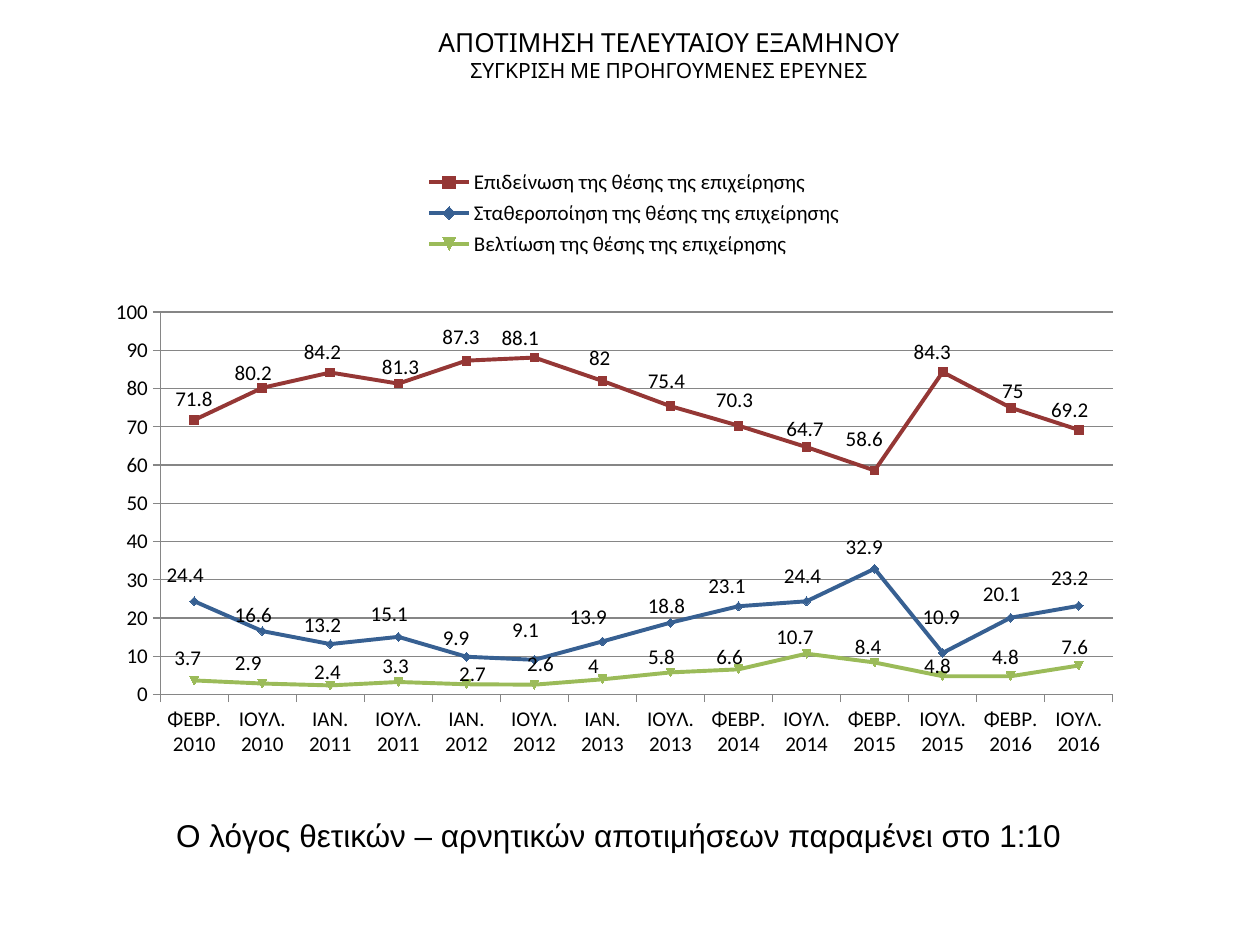
from lxml import etree
from pptx import Presentation
from pptx.chart.data import CategoryChartData
from pptx.dml.color import RGBColor
from pptx.enum.chart import XL_CHART_TYPE, XL_LABEL_POSITION, XL_LEGEND_POSITION, XL_TICK_MARK
from pptx.enum.text import MSO_ANCHOR, PP_ALIGN
from pptx.oxml import parse_xml
from pptx.oxml.ns import nsdecls
from pptx.util import Inches, Pt

COLORS = {"text": "000000", "axis": "868686",
          "worse": "953735", "stable": "376092", "better": "9BBB59"}
LEFT, TOP, WIDTH, HEIGHT = 0.7, 1.25, 8.67, 5.2
PLOT = {"x": 0.066, "y": 0.236, "w": 0.872, "h": 0.584}
LEGEND = {"x": 0.3, "y": 0.01, "w": 0.4, "h": 0.15}
LABEL_RISE = 0.18  # usual distance from a point up to its label's centre

FEB, JUL, JAN = "ΦΕΒΡ.", "ΙΟΥΛ.", "ΙΑΝ."
FIRST_MONTHS = {2010: FEB, 2011: JAN, 2012: JAN, 2013: JAN, 2014: FEB, 2015: FEB, 2016: FEB}
categories = [f"{month} {year}" for year, first in FIRST_MONTHS.items()
              for month in (first, JUL)]

# name, colour, values, label centres on the slide in inches
SERIES = [
    ("Επιδείνωση της θέσης της επιχείρησης", "worse",
     [71.8, 80.2, 84.2, 81.3, 87.3, 88.1, 82, 75.4, 70.3, 64.7, 58.6, 84.3, 75, 69.2],
     [(1.54, 3.16), (2.01, 2.96), (2.56, 2.79), (3.18, 2.91), (3.66, 2.67),
      (4.13, 2.68), (4.76, 2.84), (5.29, 3.02), (5.83, 3.17), (6.39, 3.4),
      (6.86, 3.48), (7.4, 2.79), (8.04, 3.1), (8.49, 3.25)]),
    ("Σταθεροποίηση της θέσης της επιχείρησης", "stable",
     [24.4, 16.6, 13.2, 15.1, 9.9, 9.1, 13.9, 18.8, 23.1, 24.4, 32.9, 10.9, 20.1, 23.2],
     [(1.47, 4.56), (2.01, 4.88), (2.56, 4.96), (3.09, 4.87), (3.62, 5.06),
      (4.17, 5), (4.67, 4.89), (5.29, 4.81), (5.77, 4.65), (6.37, 4.57),
      (6.86, 4.34), (7.47, 4.89), (7.95, 4.71), (8.49, 4.58)]),
    ("Βελτίωση της θέσης της επιχείρησης", "better",
     [3.7, 2.9, 2.4, 3.3, 2.7, 2.6, 4, 5.8, 6.6, 10.7, 8.4, 4.8, 4.8, 7.6],
     [(1.49, 5.22), (1.97, 5.26), (2.6, 5.33), (3.14, 5.28), (3.75, 5.35),
      (4.29, 5.27), (4.71, 5.28), (5.25, 5.21), (5.79, 5.21), (6.31, 5.05),
      (6.89, 5.13), (7.44, 5.28), (7.98, 5.21), (8.53, 5.13)]),
]


def style_font(font, name, size):
    font.name, font.size = name, Pt(size)
    font.color.rgb = RGBColor.from_string(COLORS["text"])


def place(parent, box, after=None, inner=False):
    """Give a chart part a manual layout; x and y alone mean an offset."""
    for old in parent.findall("{*}layout"):
        parent.remove(old)
    layout = parse_xml(f"<c:layout {nsdecls('c')}><c:manualLayout/></c:layout>")
    settings = {"layoutTarget": "inner"} if inner else {}
    if "w" in box:
        settings.update(xMode="edge", yMode="edge")
    for tag, value in {**settings, **box}.items():
        etree.SubElement(layout[0], f"{{{layout.nsmap['c']}}}{tag}").set("val", str(value))
    if after:
        parent.find("{*}" + after).addnext(layout)
    else:
        parent.insert(0, layout)


prs = Presentation()
prs.slide_width, prs.slide_height = Inches(10), Inches(7.5)
s = prs.slides.add_slide(prs.slide_layouts[5])

title = s.shapes.title
title.left, title.top = Inches(1.25), Inches(0.16)
title.width, title.height = Inches(8.12), Inches(0.74)
tf = title.text_frame
tf.vertical_anchor = MSO_ANCHOR.TOP
p = tf.paragraphs[0]
p.alignment = PP_ALIGN.CENTER
r = p.add_run()
r.text = "ΑΠΟΤΙΜΗΣΗ ΤΕΛΕΥΤΑΙΟΥ ΕΞΑΜΗΝΟΥ"
style_font(r.font, "Cabin", 15)
p.add_line_break()
r = p.add_run()
r.text = "ΣΥΓΚΡΙΣΗ ΜΕ ΠΡΟΗΓΟΥΜΕΝΕΣ ΕΡΕΥΝΕΣ"
style_font(r.font, "Cabin", 12)

data = CategoryChartData()
data.categories = categories
for name, _, values, _ in SERIES:
    data.add_series(name, values)
chart = s.shapes.add_chart(XL_CHART_TYPE.LINE_MARKERS, Inches(LEFT), Inches(TOP),
                           Inches(WIDTH), Inches(HEIGHT), data).chart
chart.has_title = False
style_font(chart.font, "Cambria", 18)

chart.has_legend = True
legend = chart.legend
legend.position = XL_LEGEND_POSITION.RIGHT
legend.include_in_layout = False
style_font(legend.font, "Calibri", 12)
chart_xml = chart._chartSpace.chart
place(chart_xml.find("{*}legend"), LEGEND, after="legendPos")
place(chart_xml.plotArea, PLOT, inner=True)

value_axis = chart.value_axis
value_axis.minimum_scale, value_axis.maximum_scale, value_axis.major_unit = 0, 100, 10
value_axis.has_major_gridlines = True
for axis in (chart.category_axis, value_axis):
    axis.major_tick_mark = XL_TICK_MARK.OUTSIDE
    style_font(axis.tick_labels.font, "Calibri", 12)
for part in (chart.category_axis, value_axis, value_axis.major_gridlines):
    part.format.line.width = Pt(0.75)
    part.format.line.color.rgb = RGBColor.from_string(COLORS["axis"])

step = PLOT["w"] * WIDTH / len(categories)
for series, (_, color, values, centres) in zip(chart.plots[0].series, SERIES):
    rgb = RGBColor.from_string(COLORS[color])
    series.smooth = False
    series.format.line.width = Pt(2.25)
    series.format.line.color.rgb = rgb
    marker = series.marker
    marker.size = 5
    marker.format.fill.solid()
    marker.format.fill.fore_color.rgb = rgb
    marker.format.line.color.rgb = rgb
    series.data_labels.show_value = True
    style_font(series.data_labels.font, "Calibri", 12)
    for i, (value, (x, y)) in enumerate(zip(values, centres)):
        label = series.points[i].data_label
        style_font(label.font, "Calibri", 12)
        label.position = XL_LABEL_POSITION.ABOVE
        point_x = LEFT + PLOT["x"] * WIDTH + step * (i + 0.5)
        point_y = TOP + HEIGHT * (PLOT["y"] + PLOT["h"] * (1 - value / 100))
        offset = {"x": round((x - point_x) / WIDTH, 4),
                  "y": round((y - point_y + LABEL_RISE) / HEIGHT, 4)}
        place(label._dLbl, offset, after="idx")
for leader in chart_xml.iter("{*}showLeaderLines"):
    leader.set("val", "0")

note = s.shapes.add_textbox(Inches(1.3), Inches(6.43), Inches(7.72), Inches(0.4))
note.text_frame.word_wrap = True
p = note.text_frame.paragraphs[0]
p.text = "Ο λόγος θετικών – αρνητικών αποτιμήσεων παραμένει στο 1:10"
style_font(p.font, "Arial", 18)

prs.save("out.pptx")
